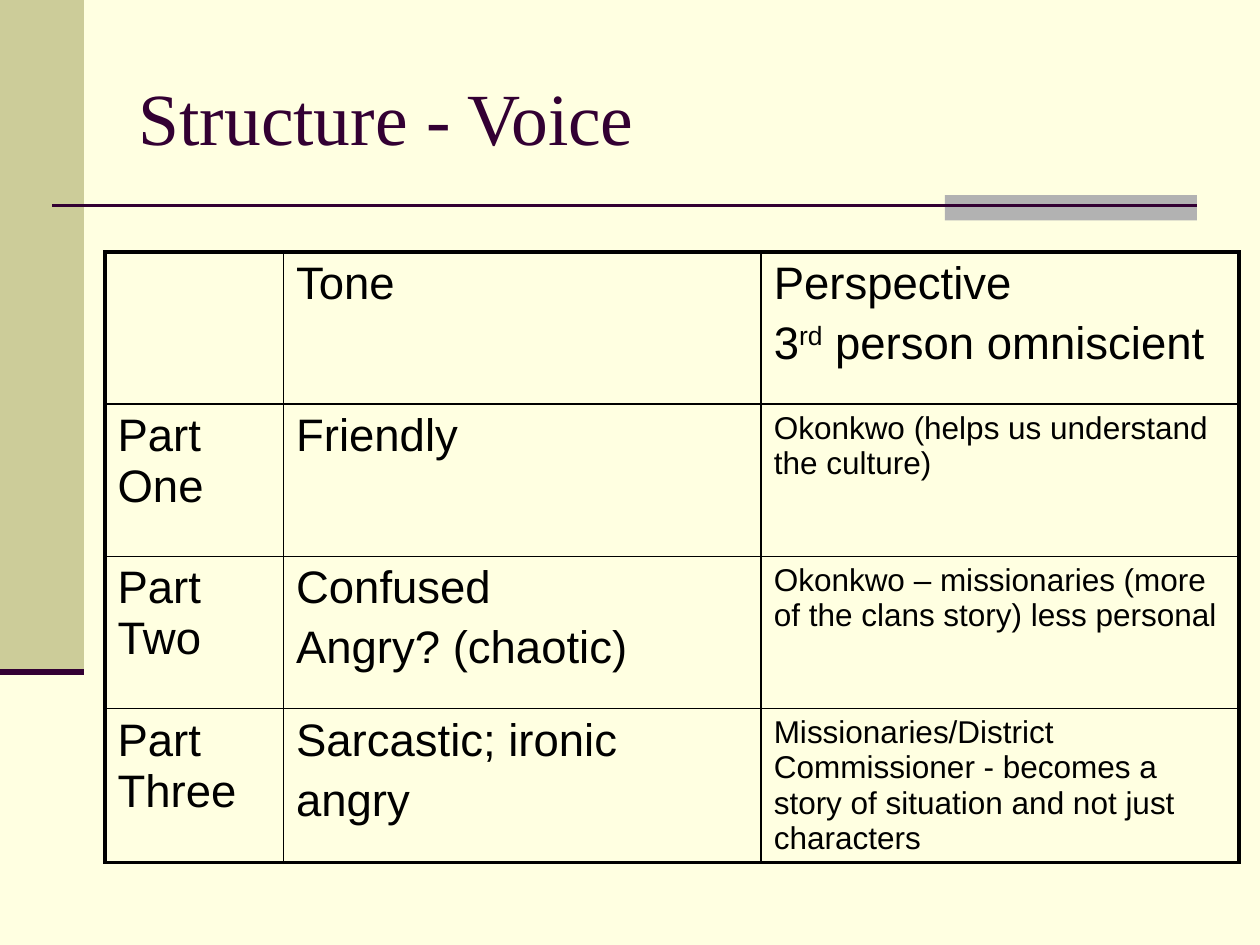
"""Build the "Structure - Voice" slide with its table of tone and perspective."""
from dataclasses import dataclass

from lxml.etree import SubElement
from pptx import Presentation
from pptx.dml.color import RGBColor
from pptx.enum.shapes import MSO_CONNECTOR, MSO_SHAPE
from pptx.enum.text import MSO_ANCHOR, MSO_AUTO_SIZE, PP_ALIGN
from pptx.oxml.ns import qn
from pptx.util import Pt

PLUM = "330033"
BLACK = "000000"
LARGE, SMALL = 26, 18
THIN, THICK = 1, 2.25


@dataclass(frozen=True)
class Block:
    left: float
    top: float
    width: float
    height: float
    fill: str


@dataclass(frozen=True)
class Rule:
    left: float
    right: float
    top: float
    weight: float


BLOCKS = [Block(0, 0, 48, 384, "CCCC99"), Block(540, 111.5, 144, 14.5, "B2B2B2")]
RULES = [Rule(30, 684, 117.5, 1.5), Rule(0, 48, 384, 3.5)]
COLUMN_WIDTHS = [102, 273, 273]
ROW_HEIGHT = 87
ROWS = [
    ["", "Tone", "Perspective\n3^rd^ person omniscient"],
    ["Part One", "Friendly", "Okonkwo (helps us understand the culture)"],
    ["Part Two", "Confused\nAngry? (chaotic)",
     "Okonkwo – missionaries (more of the clans story) less personal"],
    ["Part Three", "Sarcastic; ironic\nangry",
     "Missionaries/District Commissioner - becomes a story of situation and not just characters"],
]


def color(value: str) -> RGBColor:
    return RGBColor.from_string(value)


def write_text(text_frame, text: str, *, size: float, font: str = "Arial", fill: str = BLACK) -> None:
    for index, line in enumerate(text.split("\n")):
        paragraph = text_frame.add_paragraph() if index else text_frame.paragraphs[0]
        paragraph.alignment = PP_ALIGN.LEFT
        paragraph.space_before = Pt(0.2 * size if index else 0)
        for position, part in enumerate(line.split("^")):
            run = paragraph.add_run()
            run.text = part
            run.font.size = Pt(size)
            run.font.name = font
            run.font.bold = False
            run.font.color.rgb = color(fill)
            if position % 2:
                run.font._element.set("baseline", "30000")


def add_block(slide, block: Block) -> None:
    shape = slide.shapes.add_shape(
        MSO_SHAPE.RECTANGLE, Pt(block.left), Pt(block.top), Pt(block.width), Pt(block.height))
    shape.shadow.inherit = False
    shape.fill.solid()
    shape.fill.fore_color.rgb = color(block.fill)
    shape.line.fill.background()


def add_rule(slide, rule: Rule) -> None:
    connector = slide.shapes.add_connector(
        MSO_CONNECTOR.STRAIGHT, Pt(rule.left), Pt(rule.top), Pt(rule.right), Pt(rule.top))
    connector.line.color.rgb = color(PLUM)
    connector.line.width = Pt(rule.weight)
    SubElement(connector._element.spPr, qn("a:effectLst"))


def set_borders(cell, weights: dict[str, float]) -> None:
    properties = cell._tc.get_or_add_tcPr()
    for side, weight in weights.items():
        line = SubElement(properties, qn(f"a:ln{side}"), w=str(Pt(weight)))
        fill = SubElement(line, qn("a:solidFill"))
        SubElement(fill, qn("a:srgbClr"), val=BLACK)


def add_voice_table(slide) -> None:
    last_row, last_column = len(ROWS) - 1, len(COLUMN_WIDTHS) - 1
    table = slide.shapes.add_table(
        len(ROWS), len(COLUMN_WIDTHS), Pt(60), Pt(144),
        Pt(sum(COLUMN_WIDTHS)), Pt(ROW_HEIGHT * len(ROWS))).table
    table.first_row = table.horz_banding = False
    for column, width in zip(table.columns, COLUMN_WIDTHS):
        column.width = Pt(width)
    for row_index, texts in enumerate(ROWS):
        table.rows[row_index].height = Pt(ROW_HEIGHT)
        for column_index, text in enumerate(texts):
            cell = table.cell(row_index, column_index)
            outer_sides = {
                "L": column_index == 0, "R": column_index == last_column,
                "T": row_index == 0, "B": row_index == last_row}
            set_borders(cell, {side: THICK if outer else THIN for side, outer in outer_sides.items()})
            cell.fill.background()
            if text:
                is_detail = row_index > 0 and column_index == last_column
                write_text(cell.text_frame, text, size=SMALL if is_detail else LARGE)


def add_title(slide) -> None:
    title = slide.shapes.title
    title.left, title.top, title.width, title.height = Pt(72), Pt(21.6), Pt(612), Pt(90)
    title.text_frame.auto_size = MSO_AUTO_SIZE.NONE
    title.text_frame.vertical_anchor = MSO_ANCHOR.MIDDLE
    write_text(title.text_frame, "Structure - Voice", size=42, font="Times New Roman", fill=PLUM)


def main() -> None:
    presentation = Presentation()
    presentation.slide_width, presentation.slide_height = Pt(720), Pt(540)
    slide = presentation.slides.add_slide(presentation.slide_layouts[5])
    slide.background.fill.solid()
    slide.background.fill.fore_color.rgb = color("FFFFE1")
    for block in BLOCKS:
        add_block(slide, block)
    for rule in RULES:
        add_rule(slide, rule)
    add_title(slide)
    add_voice_table(slide)
    presentation.save("out.pptx")


if __name__ == "__main__":
    main()
